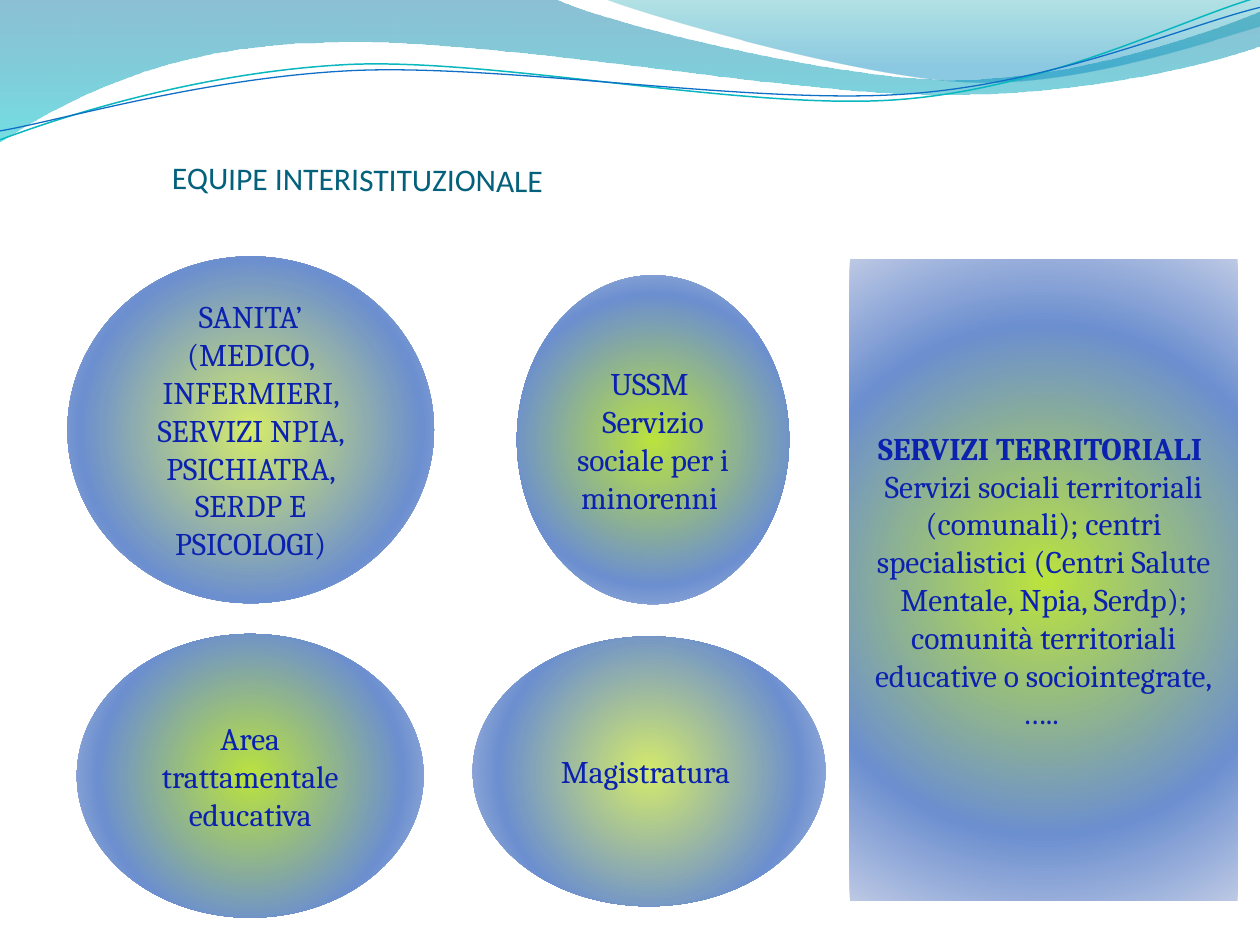
"""Builds the slide on the inter-institutional team: five service areas under a wave banner."""
from pptx import Presentation
from pptx.dml.color import RGBColor
from pptx.enum.shapes import MSO_SHAPE
from pptx.enum.text import MSO_ANCHOR, PP_ALIGN
from pptx.oxml import parse_xml
from pptx.oxml.ns import nsdecls, qn
from pptx.util import Cm, Pt

OVAL, RECTANGLE = MSO_SHAPE.OVAL, MSO_SHAPE.RECTANGLE
LEFT, CENTER, MIDDLE = PP_ALIGN.LEFT, PP_ALIGN.CENTER, MSO_ANCHOR.MIDDLE

COLORS = {
    "title": "04617B", "text": "0B21AF",
    "lime": "BBE33D", "pale lime": "D4EA6B", "blue": "6C8FCF", "pale blue": "BCC8E4",
    "wave top": "0074A0", "wave bottom": "00C4CD",
    "crest top": "00A0A8", "crest bottom": "008ABF",
    "teal line": "09B7BF", "blue line": "0F6FC6",
}

TITLE = "EQUIPE INTERISTITUZIONALE"
TITLE_PLACE = (3.22, 2.06, 18.39, 3.18)

AREAS = [
    (OVAL, (1.36, 5.17, 7.39, 6.99), "pale lime", [
        ("SANITA’ (MEDICO, INFERMIERI, SERVIZI NPIA, PSICHIATRA, SERDP E PSICOLOGI)", False)]),
    (OVAL, (10.42, 5.55, 5.49, 6.63), "lime", [
        ("USSM ", False), ("Servizio sociale per i minorenni ", False)]),
    (OVAL, (1.55, 12.78, 6.99, 5.72), "lime", [("Area trattamentale educativa", False)]),
    (OVAL, (9.53, 12.83, 7.11, 5.44), "pale lime", [("Magistratura ", False)]),
    (RECTANGLE, (17.13, 5.23, 7.82, 12.93), "lime", [
        ("SERVIZI TERRITORIALI ", True),
        ("Servizi sociali territoriali (comunali); centri specialistici (Centri Salute Mentale, "
         "Npia, Serdp); comunità territoriali educative o sociointegrate,", False),
        ("….. ", False)]),
]

WAVES = [
    ([(0, "wave top", 45), (100, "wave bottom", 55)], [
        (0, 0), (11.18, -0.03),
        (12.09, 0.43, 16.84, 1.6, 19.25, 1.6), (21.67, 1.6, 24.33, 0.66, 25.4, 0.23),
        (25.43, 0.91),
        (24.97, 1.12, 22.1, 1.93, 18.95, 1.91), (15.8, 1.91, 9.7, 0.71, 6.53, 0.86),
        (3.28, 0.89, 1.17, 2.11, -0.03, 2.87)]),
    ([(0, "crest top", 30), (80, "crest bottom", 45)], [
        (12.17, -0.03),
        (12.93, 0.28, 17.32, 1.57, 19.53, 1.65), (21.72, 1.75, 24.41, 0.81, 25.4, 0.53),
        (25.4, 0)]),
]

WAVE_LINES = [
    ("teal line", 0.85, [
        (0, 2.82), (1.22, 2.36, 4.01, 1.45, 7.04, 1.3),
        (10.03, 1.17, 15.06, 2.24, 18.11, 2.01), (21.16, 1.78, 23.83, 0.38, 25.35, -0.05)]),
    ("blue line", 0.75, [
        (0, 2.64), (1.19, 2.44, 4.17, 1.55, 7.19, 1.42),
        (10.24, 1.3, 15.16, 2.11, 18.21, 1.9), (21.23, 1.7, 23.9, 0.51, 25.4, 0.15)]),
]


def color(name):
    return RGBColor.from_string(COLORS[name])


def add_outline(page, segments, close):
    """Draw segments of two numbers as straight lines and of six as cubic curves."""
    corners = [tuple(map(Cm, segment[-2:])) for segment in segments]
    builder = page.shapes.build_freeform(*corners[0])
    builder.add_line_segments(corners[1:], close=close)
    outline = builder.convert_to_shape()
    outline.shadow.inherit = False
    steps = list(outline.element.spPr.iter(qn("a:lnTo")))
    for step, segment in zip(steps, segments[1:]):
        if len(segment) == 6:
            points = "".join(
                f'<a:pt x="{Cm(x) - outline.left}" y="{Cm(y) - outline.top}"/>'
                for x, y in zip(segment[::2], segment[1::2]))
            curve = parse_xml(f'<a:cubicBezTo {nsdecls("a")}>{points}</a:cubicBezTo>')
            step.getparent().replace(step, curve)
    return outline


def fill_gradient(shape, stops, direction):
    stop_list = ""
    for position, name, opacity in stops:
        alpha = f'<a:alpha val="{opacity * 1000}"/>' if opacity < 100 else ""
        stop_list += (f'<a:gs pos="{position * 1000}"><a:srgbClr val="{COLORS[name]}">'
                      f'{alpha}</a:srgbClr></a:gs>')
    gradient = parse_xml(
        f'<a:gradFill {nsdecls("a")} rotWithShape="1"><a:gsLst>{stop_list}</a:gsLst>'
        f'{direction}</a:gradFill>')
    shape.fill.solid()
    properties = shape.element.spPr
    properties.replace(properties.find(qn("a:solidFill")), gradient)
    shape.line.fill.background()


def write_text(para, text, font, ink, align=CENTER, bold=False, size=18):
    para.alignment = align
    span = para.add_run()
    span.text = text
    span.font.name = font
    span.font.size = Pt(size)
    span.font.bold = bold
    span.font.color.rgb = color(ink)


def prepare_frame(box):
    frame = box.text_frame
    frame.word_wrap = True
    frame.vertical_anchor = MIDDLE
    return frame


def add_area(page, kind, place, center, lines):
    box = page.shapes.add_shape(kind, *map(Cm, place))
    box.shadow.inherit = False
    stops = [(0, center, 100), (68, "blue", 100), (100, "pale blue", 100)]
    fill_gradient(box, stops, '<a:path path="circle"><a:fillToRect l="50000" t="50000" '
                              'r="50000" b="50000"/></a:path>')
    frame = prepare_frame(box)
    for index, (text, bold) in enumerate(lines):
        para = frame.add_paragraph() if index else frame.paragraphs[0]
        write_text(para, text, "Cambria", "text", bold=bold)


def main():
    deck = Presentation()
    deck.slide_width, deck.slide_height = Cm(25.4), Cm(19.05)
    page = deck.slides.add_slide(deck.slide_layouts[6])

    for stops, segments in WAVES:
        wave = add_outline(page, segments, close=True)
        fill_gradient(wave, stops, '<a:lin ang="5400000" scaled="0"/>')
    for name, width, segments in WAVE_LINES:
        wave_line = add_outline(page, segments, close=False)
        wave_line.fill.background()
        wave_line.line.color.rgb = color(name)
        wave_line.line.width = Pt(width)

    title = page.shapes.add_textbox(*map(Cm, TITLE_PLACE))
    title.rotation = 0.5
    write_text(prepare_frame(title).paragraphs[0], TITLE, "Calibri", "title", align=LEFT)

    for area in AREAS:
        add_area(page, *area)
    deck.save("out.pptx")


if __name__ == "__main__":
    main()
